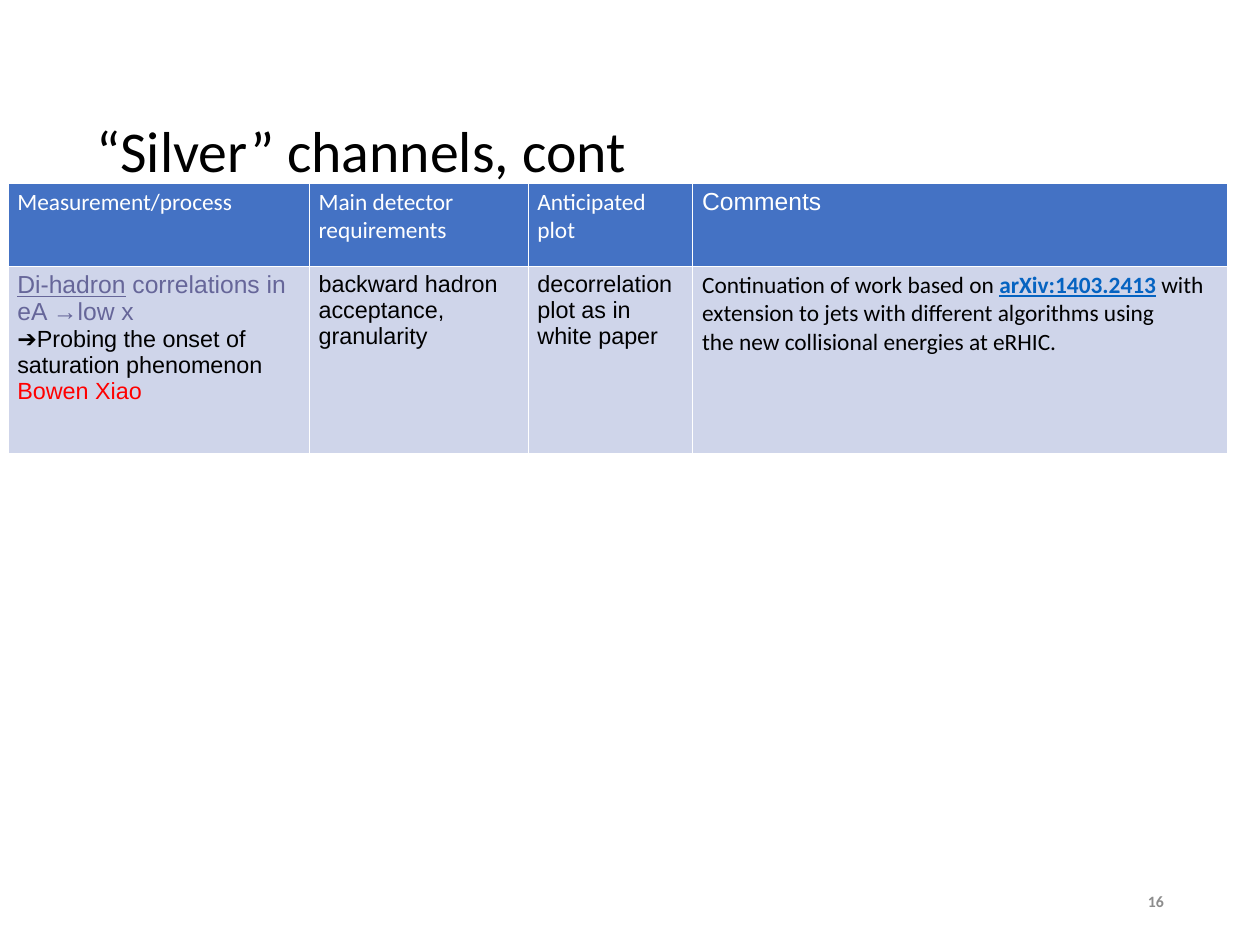
from lxml.etree import SubElement
from pptx import Presentation
from pptx.dml.color import RGBColor
from pptx.enum.text import MSO_ANCHOR, PP_ALIGN
from pptx.oxml.ns import qn
from pptx.util import Pt

WHITE, BLACK, RED = "FFFFFF", "000000", "FF0000"
HEADER_BLUE, BODY_BLUE = "4472C4", "CFD5EA"
TOPIC_PURPLE, LINK_BLUE, NUMBER_GREY = "666699", "0563C1", "8C8C8C"
COLUMN_WIDTHS = [244.8, 177.8, 133.9, 434.9]
ROW_HEIGHTS = [67.7, 151.9]


def rgb(color):
    return RGBColor.from_string(color)


def set_font(font, family, size, color, bold=False):
    font.name = family
    font.size = Pt(size)
    font.bold = bold
    font.color.rgb = rgb(color)


def line(*pieces, family="Arial", size=19, color=BLACK):
    return pieces, family, size, color


def emphasis(text, color, bold=False):
    return text, color, bold


def set_insets(target):
    target.margin_left = target.margin_right = Pt(7.6)
    target.margin_top = target.margin_bottom = Pt(3.8)


def add_text(slide, text, left, top, width, height, size, color, bold=False,
             align=PP_ALIGN.LEFT, spacing=1.0):
    frame = slide.shapes.add_textbox(Pt(left), Pt(top), Pt(width), Pt(height)).text_frame
    frame.word_wrap = True
    frame.vertical_anchor = MSO_ANCHOR.MIDDLE
    set_insets(frame)
    paragraph = frame.paragraphs[0]
    paragraph.text = text
    paragraph.alignment = align
    paragraph.line_spacing = spacing
    set_font(paragraph.font, "Calibri", size, color, bold)


def set_borders(cell, color, width):
    properties = cell._tc.get_or_add_tcPr()
    for position, side in enumerate(("lnL", "lnR", "lnT", "lnB")):
        border = SubElement(properties, qn(f"a:{side}"), w=str(Pt(width)))
        fill = SubElement(border, qn("a:solidFill"))
        SubElement(fill, qn("a:srgbClr"), val=color)
        properties.insert(position, border)


def fill_cell(cell, lines, background):
    cell.fill.solid()
    cell.fill.fore_color.rgb = rgb(background)
    set_borders(cell, WHITE, 1)
    set_insets(cell)
    cell.vertical_anchor = MSO_ANCHOR.TOP
    frame = cell.text_frame
    for index, (pieces, family, size, color) in enumerate(lines):
        paragraph = frame.paragraphs[0] if index == 0 else frame.add_paragraph()
        paragraph.alignment = PP_ALIGN.LEFT
        set_font(paragraph.font, family, size, color)
        for piece in pieces:
            run = paragraph.add_run()
            if isinstance(piece, str):
                run.text = piece
                set_font(run.font, family, size, color)
            else:
                run.text, emphasis_color, bold = piece
                set_font(run.font, family, size, emphasis_color, bold)
                run.font.underline = True


def add_channel_table(slide, left, top, rows):
    table = slide.shapes.add_table(
        len(ROW_HEIGHTS), len(COLUMN_WIDTHS), Pt(left), Pt(top),
        Pt(sum(COLUMN_WIDTHS)), Pt(sum(ROW_HEIGHTS))).table
    for column, width in zip(table.columns, COLUMN_WIDTHS):
        column.width = Pt(width)
    for row, height, contents, background in zip(
            table.rows, ROW_HEIGHTS, rows, (HEADER_BLUE, BODY_BLUE)):
        row.height = Pt(height)
        for cell, lines in zip(row.cells, contents):
            fill_cell(cell, lines, background)


def main():
    presentation = Presentation()
    presentation.slide_width = Pt(1023.84)
    presentation.slide_height = Pt(768.24)
    slide = presentation.slides.add_slide(presentation.slide_layouts[6])

    headings = [[line(heading, family="Calibri", color=WHITE)] for heading in
                ("Measurement/process", "Main detector requirements", "Anticipated plot")]
    headings.append([line("Comments", size=20, color=WHITE)])
    dihadron_channel = [
        [line(emphasis("Di-hadron", TOPIC_PURPLE), " correlations in eA →low x",
              size=20, color=TOPIC_PURPLE),
         line("➔Probing the onset of saturation phenomenon"),
         line("Bowen Xiao", color=RED)],
        [line("backward hadron acceptance, granularity ")],
        [line("decorrelation plot as in white paper")],
        [line("Continuation of work based on ",
              emphasis("arXiv:1403.2413", LINK_BLUE, bold=True),
              " with extension to jets with different algorithms using ",
              family="Calibri"),
         line("the new collisional energies at eRHIC.", family="Calibri")],
    ]
    add_channel_table(slide, 6.5, 149, [headings, dihadron_channel])
    add_text(slide, "“Silver” channels, cont", 70.6, 69.1, 883.4, 111.6, 46.9, BLACK,
             spacing=0.9)
    add_text(slide, "16", 722.9, 712.1, 230.4, 41, 12.8, NUMBER_GREY, bold=True,
             align=PP_ALIGN.RIGHT)
    presentation.save("out.pptx")


if __name__ == "__main__":
    main()
